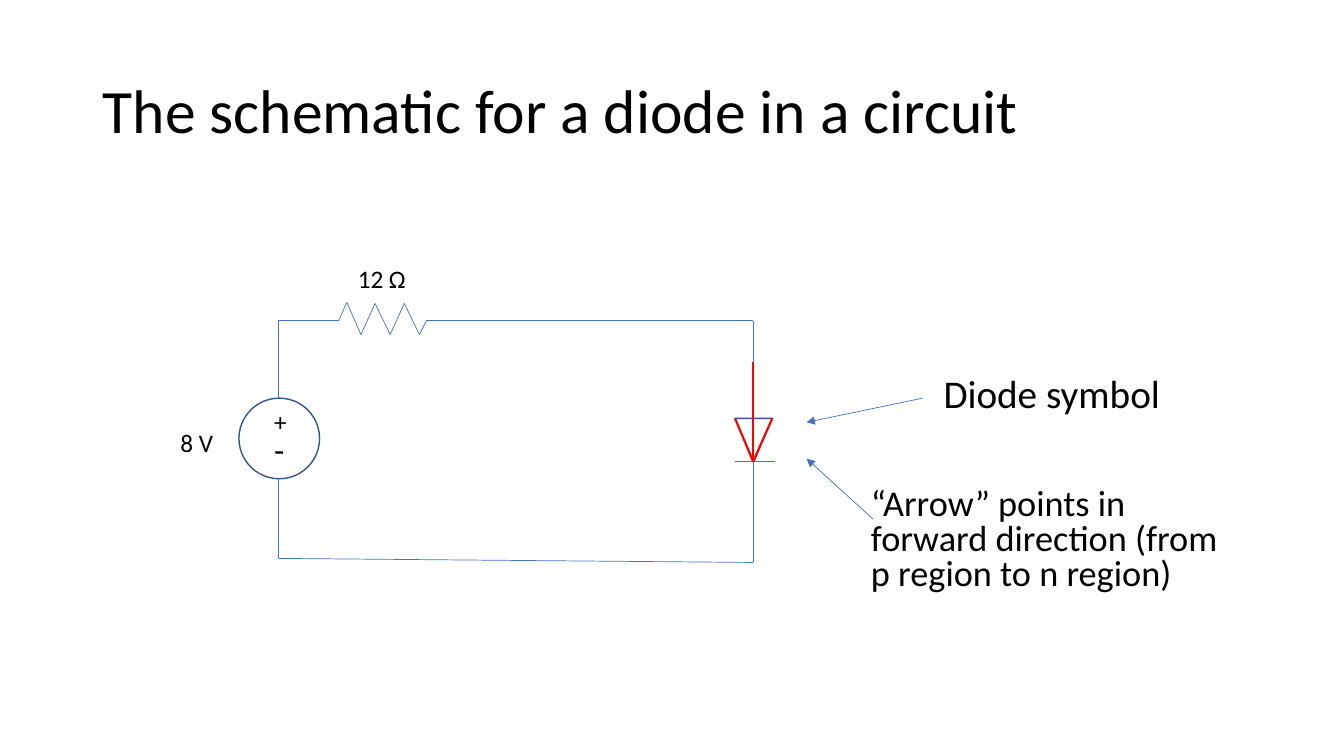
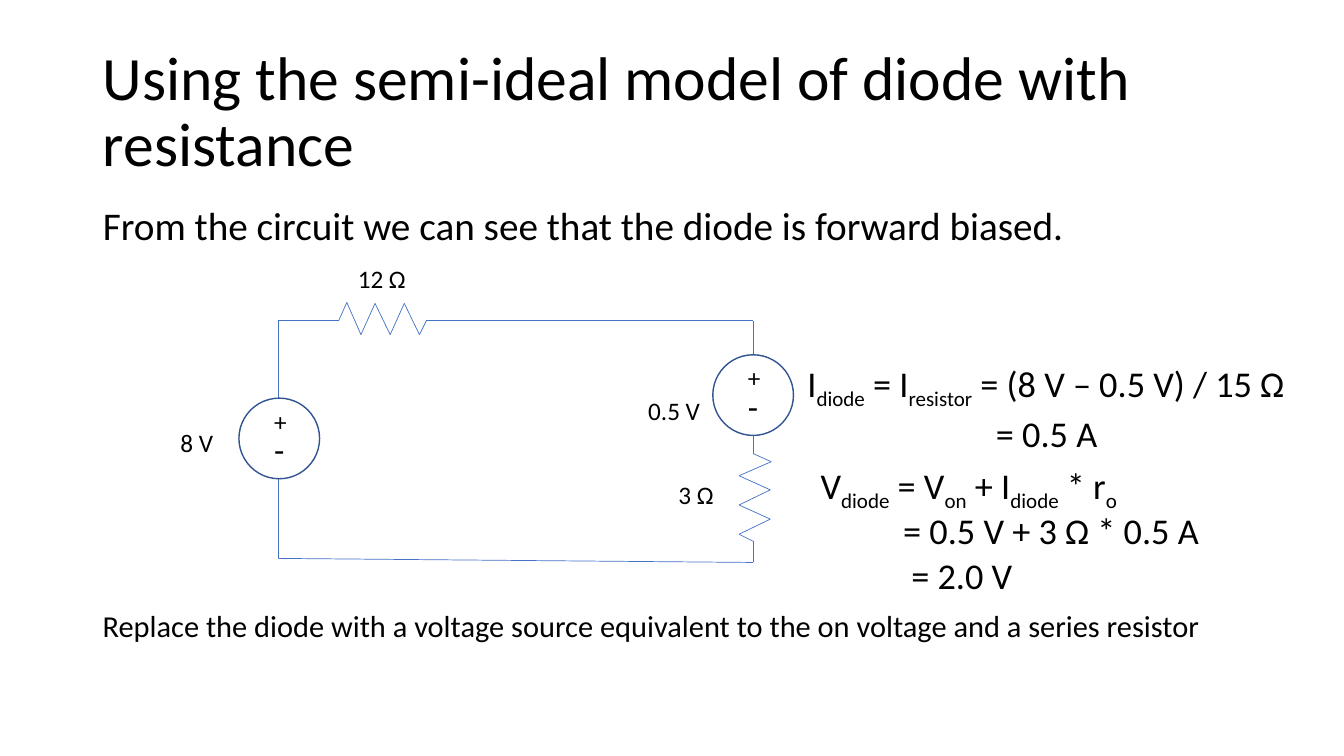
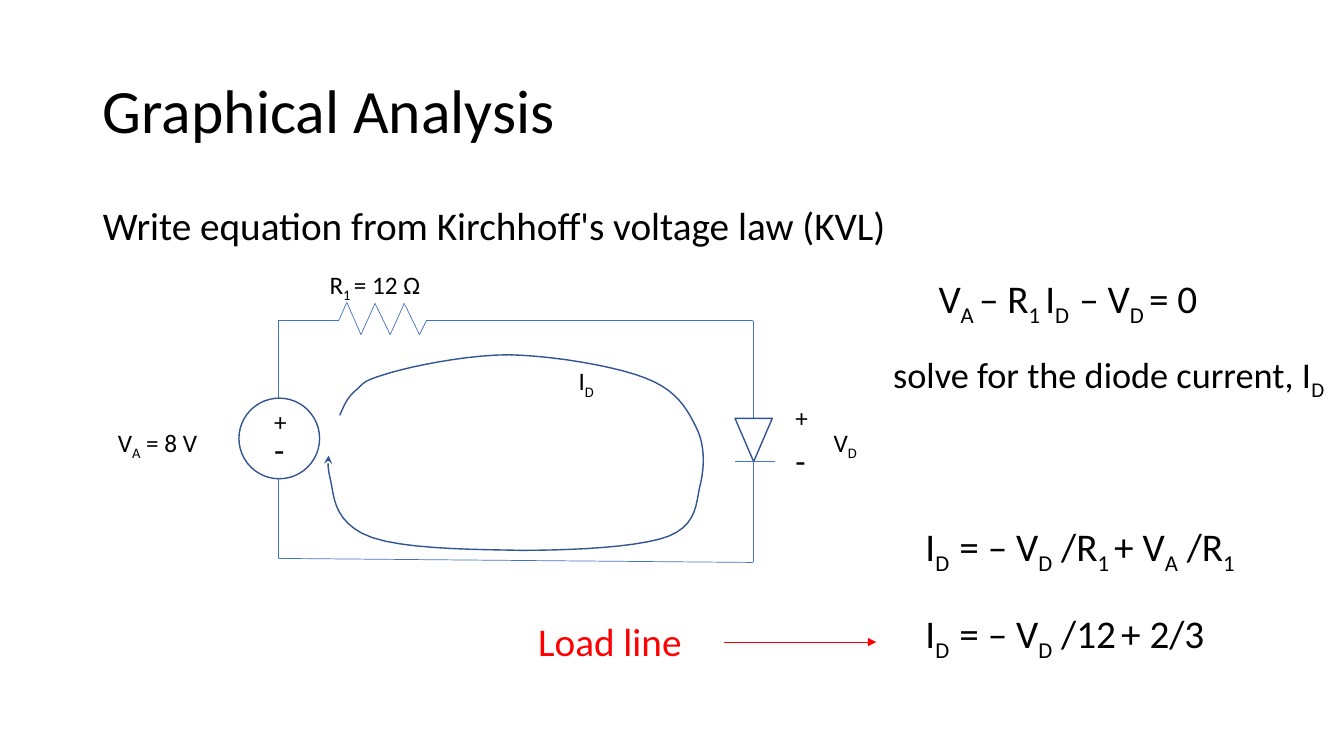
from itertools import pairwise

from lxml import etree
from pptx import Presentation
from pptx.dml.color import RGBColor
from pptx.enum.shapes import MSO_CONNECTOR, MSO_SHAPE
from pptx.enum.text import MSO_ANCHOR, PP_ALIGN
from pptx.oxml.ns import qn
from pptx.util import Inches, Pt

STRAIGHT = MSO_CONNECTOR.STRAIGHT
OVAL = MSO_SHAPE.OVAL
TRIANGLE = MSO_SHAPE.ISOSCELES_TRIANGLE
MIDDLE = MSO_ANCHOR.MIDDLE
LEFT = PP_ALIGN.LEFT

FONT = "Calibri"
BLACK, WIRE, OUTLINE, RED = "000000", "4472C4", "325491", "FF0000"
TITLE_BOX = (0.92, 0.4, 11.5, 1.45)
BODY_BOX = (0.92, 2, 11.5, 0.54)
CIRCUIT = (2.76, 3.18)  # top left corner of the wire loop
LOOP_W, LOOP_H = 4.71, 2.36
SOURCE_D = 0.8
DIODE_Y, DIODE_W, DIODE_H = 0.97, 0.37, 0.43
DIODE_GAP = (DIODE_Y, DIODE_Y + DIODE_H)  # break in the right wire
MODEL_SOURCE_Y, MODEL_RESISTOR_Y = 0.34, 1.32

# (along, across) corners of a resistor, which starts and ends on its axis
AXIS = 0.18
ZIGZAG = [(0, AXIS), (0.08, 0), (0.22, 0.32), (0.36, 0.01),
          (0.51, 0.32), (0.65, 0.01), (0.8, 0.32), (0.87, AXIS)]
RESISTOR_L = ZIGZAG[-1][0]

# Bezier knots and handles of the current loop, from its top left corner
CURRENT = [(0.12, 0.6),
           (0.16, 0.51), (0.19, 0.43), (0.27, 0.36),
           (0.36, 0.29), (0.32, 0.27), (0.55, 0.2),
           (0.79, 0.12), (1.37, 0), (1.8, 0),
           (2.24, 0.01), (2.84, 0.11), (3.15, 0.23),
           (3.46, 0.35), (3.56, 0.53), (3.65, 0.71),
           (3.74, 0.88), (3.74, 1.09), (3.7, 1.27),
           (3.65, 1.45), (3.68, 1.68), (3.38, 1.8),
           (3.09, 1.91), (2.43, 1.94), (1.92, 1.94),
           (1.42, 1.93), (0.63, 1.93), (0.34, 1.77),
           (0.05, 1.62), (0.06, 1.37), (0.03, 1.25),
           (0, 1.12), (0, 1.09), (0.01, 1)]


def rgb(color):
    return RGBColor.from_string(color)


def style_line(sp, color, width, arrow=None):
    sp.line.color.rgb = rgb(color)
    sp.line.width = Pt(width)
    if arrow:
        ln = sp.line._get_or_add_ln()
        etree.SubElement(ln, qn("a:tailEnd"), type=arrow)


def line(shapes, x1, y1, x2, y2, color=WIRE, width=0.5, arrow=None):
    cxn = shapes.add_connector(STRAIGHT, *map(Inches, (x1, y1, x2, y2)))
    style_line(cxn, color, width, arrow)
    etree.SubElement(cxn._element.spPr, qn("a:effectLst"))


def outline(shapes, kind, *box):
    sp = shapes.add_shape(kind, *map(Inches, box))
    sp.shadow.inherit = False
    sp.fill.background()
    style_line(sp, OUTLINE, 1)
    return sp


def write(tf, paragraphs, size, color=BLACK, spacing=1, before=0, indents=()):
    """Fill a frame; in each paragraph every second part between bars is a subscript."""
    tf.word_wrap = True
    for i, text in enumerate(paragraphs):
        p = tf.add_paragraph() if i else tf.paragraphs[0]
        p.alignment = LEFT
        p.line_spacing = spacing
        p.space_before = Pt(before)
        pPr = p._p.get_or_add_pPr()
        pPr.set("marL", str(Inches(indents[i] if indents else 0)))
        pPr.set("indent", "0")
        etree.SubElement(pPr, qn("a:buNone"))
        for j, part in enumerate(text.split("|")):
            if not part:
                continue
            r = p.add_run()
            r.text = part
            r.font.name = FONT
            r.font.size = Pt(size)
            r.font.color.rgb = rgb(color)
            if j % 2:
                r.font._element.set("baseline", "-25000")


def label(shapes, text, x, y, w=0.71, h=0.4, size=18):
    sp = shapes.add_textbox(*map(Inches, (x, y, w, h)))
    write(sp.text_frame, [text], size)


def note(shapes, box, *paragraphs, size=28, spacing=0.9, color=BLACK, indents=()):
    sp = shapes.add_textbox(*map(Inches, box))
    write(sp.text_frame, paragraphs, size, color, spacing, 10, indents)


def polarity(shapes, x, y, gap):
    label(shapes, "+", x, y, 0.36)
    label(shapes, "-", x, y + gap, 0.36, 0.5, 24)


def source(shapes, x, y):
    """Voltage source from its top left corner."""
    group = shapes.add_group_shape().shapes
    outline(group, OVAL, x, y, SOURCE_D, SOURCE_D)
    polarity(group, x + 0.25, y + 0.03, 0.23)


def resistor(shapes, x, y, upright=False):
    """Zigzag from its top left corner, or from its top right one if upright."""
    group = shapes.add_group_shape().shapes
    corners = [(x - b, y + a) if upright else (x + a, y + b) for a, b in ZIGZAG]
    for start, end in pairwise(corners):
        line(group, *start, *end)


def diode(shapes, x, y):
    group = shapes.add_group_shape().shapes
    outline(group, TRIANGLE, x, y, DIODE_W, DIODE_H).rotation = 180
    line(group, x + 0.4, y + DIODE_H, x, y + DIODE_H)


def red_arrow(shapes, x, y):
    """Mark the direction of a diode placed at the same point."""
    group = shapes.add_group_shape().shapes
    tip = (x + 0.18, y + DIODE_H)
    for start in ((x, y), (x + DIODE_W, y), (x + 0.18, y - 0.56)):
        line(group, *start, *tip, RED, 1.5)


def circuit(shapes, x, y, gap):
    """Wire loop with source and series resistor, its right side open over the gap."""
    right, bottom = x + LOOP_W, y + LOOP_H
    gap_top, gap_bottom = gap
    for wire in ((x, y, x, y + 0.77),
                 (x, y + 0.77 + SOURCE_D, x, bottom),
                 (x, y, x + 0.6, y),
                 (x + 0.6 + RESISTOR_L, y, right, y),
                 (x, bottom, right, bottom + 0.04),
                 (right, y, right, y + gap_top),
                 (right, y + gap_bottom, right, bottom + 0.04)):
        line(shapes, *wire)
    source(shapes, x - 0.39, y + 0.77)
    resistor(shapes, x + 0.6, y - AXIS)


def plain_labels(shapes, x, y):
    label(shapes, "8 V", x - 1.07, y + 1.01)
    label(shapes, "12 Ω", x + 0.69, y - 0.62)


def current_loop(shapes, x, y, steps=10):
    points = [CURRENT[0]]
    for i in range(0, len(CURRENT) - 1, 3):
        knots = CURRENT[i:i + 4]
        for n in range(1, steps + 1):
            t = n / steps
            u = 1 - t
            weights = (u ** 3, 3 * u * u * t, 3 * u * t * t, t ** 3)
            points.append(tuple(sum(w * k[axis] for w, k in zip(weights, knots))
                                for axis in (0, 1)))
    points = [(Inches(x + a), Inches(y + b)) for a, b in points]
    builder = shapes.build_freeform(*points[0])
    builder.add_line_segments(points[1:], close=False)
    sp = builder.convert_to_shape()
    sp.shadow.inherit = False
    sp.fill.background()
    style_line(sp, OUTLINE, 1, "stealth")


def set_template(prs):
    """Place title and body once, on the master."""
    prs.slide_width, prs.slide_height = Inches(13.33), Inches(7.5)
    for sp, box in zip(prs.slide_master.placeholders, (TITLE_BOX, BODY_BOX)):
        sp.left, sp.top, sp.width, sp.height = map(Inches, box)
        sp.text_frame.vertical_anchor = MIDDLE if box == TITLE_BOX else None


def new_slide(prs, title, body=None, gap=DIODE_GAP):
    slide = prs.slides.add_slide(prs.slide_layouts[1 if body else 5])
    write(slide.shapes.title.text_frame, [title], 44, spacing=0.9)
    if body:
        write(slide.placeholders[1].text_frame, [body], 28, spacing=0.9, before=10)
    circuit(slide.shapes, *CIRCUIT, gap)
    return slide.shapes


def diode_slide(prs):
    shapes = new_slide(prs, "The schematic for a diode in a circuit")
    x, y = CIRCUIT
    plain_labels(shapes, x, y)
    symbol = (x + LOOP_W - 0.18, y + DIODE_Y)
    diode(shapes, *symbol)
    red_arrow(shapes, *symbol)
    note(shapes, (9.26, 3.67, 2.63, 0.71), "Diode symbol")
    line(shapes, 9.15, 3.95, 8, 4.19, arrow="triangle")
    note(shapes, (8.54, 4.8, 3.79, 1.24),
         "“Arrow” points in forward direction (from p region to n region)",
         size=25.9, spacing=0.8)
    line(shapes, 8.66, 5.15, 8, 4.55, arrow="triangle")


def model_slide(prs):
    shapes = new_slide(prs, "Using the semi-ideal model of diode with resistance",
                       "From the circuit we can see that the diode is forward biased.",
                       (MODEL_SOURCE_Y, MODEL_RESISTOR_Y + RESISTOR_L))
    x, y = CIRCUIT
    right = x + LOOP_W
    plain_labels(shapes, x, y)
    source(shapes, right - SOURCE_D / 2, y + MODEL_SOURCE_Y)
    line(shapes, right, y + MODEL_SOURCE_Y + SOURCE_D, right, y + MODEL_RESISTOR_Y)
    resistor(shapes, right + AXIS, y + MODEL_RESISTOR_Y, upright=True)
    label(shapes, "0.5 V", right - 1.14, y + 0.69, 0.88)
    label(shapes, "3 Ω", right - 0.84, y + 1.53)
    note(shapes, (7.91, 3.58, 5.4, 0.99),
         "I|diode| = I|resistor| = (8 V – 0.5 V) / 15 Ω", "= 0.5 A",
         size=25.9, spacing=0.8, indents=(0, 1.87))
    note(shapes, (8.04, 4.63, 4.53, 1.4),
         "V|diode| = V|on| + I|diode| * r|o", "= 0.5 V + 3 Ω * 0.5 A", "= 2.0 V",
         size=25.9, spacing=0.7, indents=(0, 0.82, 0.9))
    note(shapes, (0.92, 6.07, 11.5, 0.54),
         "Replace the diode with a voltage source equivalent to the on voltage "
         "and a series resistor", size=21.7, spacing=0.7)


def analysis_slide(prs):
    shapes = new_slide(prs, "Graphical Analysis",
                       "Write equation from Kirchhoff's voltage law (KVL)")
    x, y = CIRCUIT
    right = x + LOOP_W
    diode(shapes, right - 0.18, y + DIODE_Y)
    current_loop(shapes, x + 0.49, y + 0.34)
    label(shapes, "V|A| = 8 V", x - 1.69, y + 1.01, 1.33)
    label(shapes, "R|1 |= 12 Ω", x + 0.41, y - 0.56, 1.18)
    label(shapes, "I|D", x + 2.88, y + 0.4)
    polarity(shapes, right + 0.32, y + 0.76, 0.38)
    label(shapes, "V|D", right + 0.7, y + 1.01, 0.52)
    note(shapes, (9.21, 2.68, 2.95, 0.54), "V|A |– R|1 |I|D  |– V|D |= 0")
    note(shapes, (8.76, 3.45, 4.62, 0.84), "solve for the diode current, I|D", size=25.9)
    note(shapes, (9.08, 5.14, 3.47, 0.54), "I|D  |= – V|D| /R|1 |+ V|A| /R|1")
    note(shapes, (9.08, 6, 3.47, 0.54), "I|D  |= – V|D| /12| |+ 2/3")
    note(shapes, (5.24, 6.13, 2.3, 0.84), "Load line", color=RED)
    line(shapes, 7.18, 6.37, 8.69, 6.37, RED, arrow="triangle")


def main():
    prs = Presentation()
    set_template(prs)
    for build in (diode_slide, model_slide, analysis_slide):
        build(prs)
    prs.save("out.pptx")


if __name__ == "__main__":
    main()
